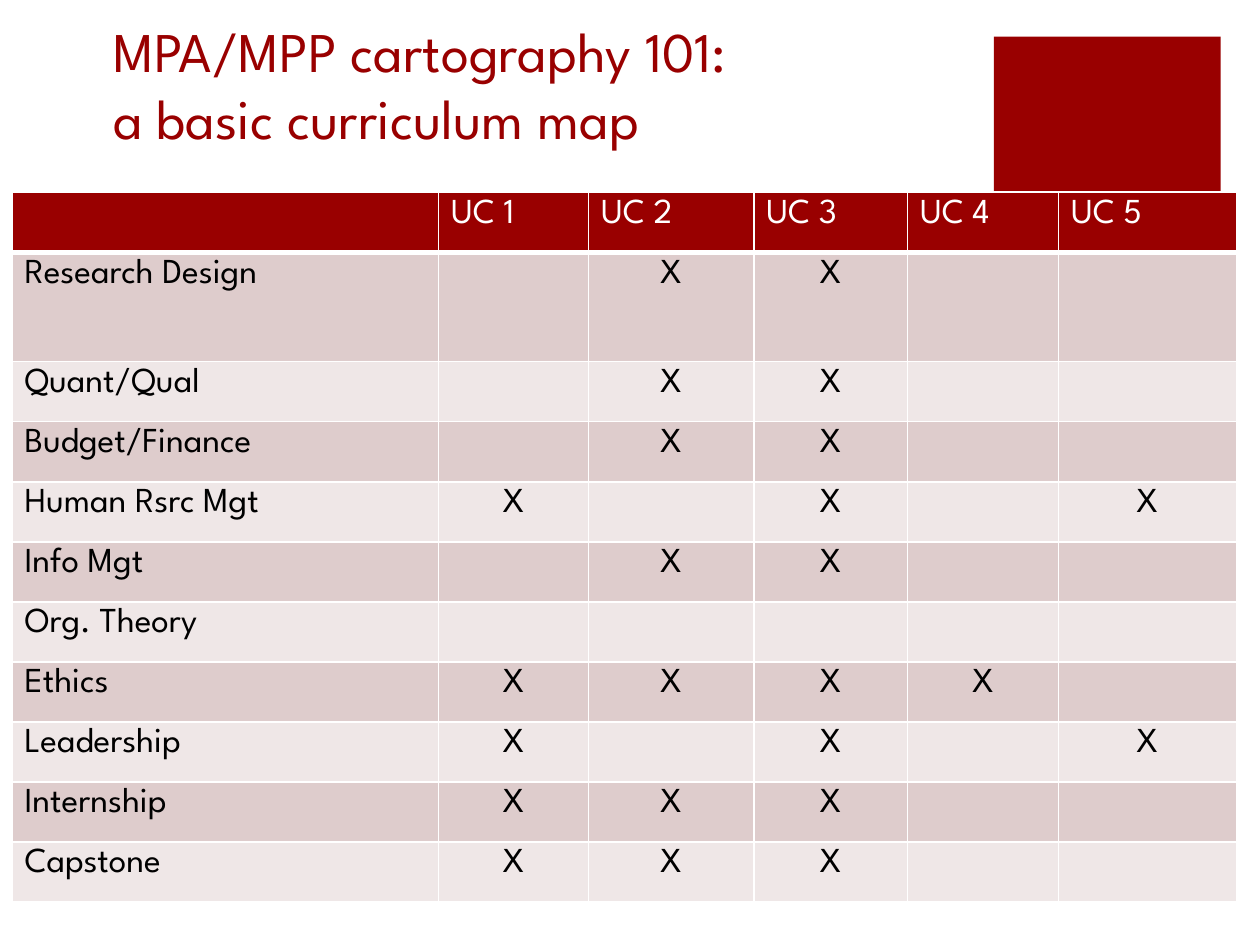
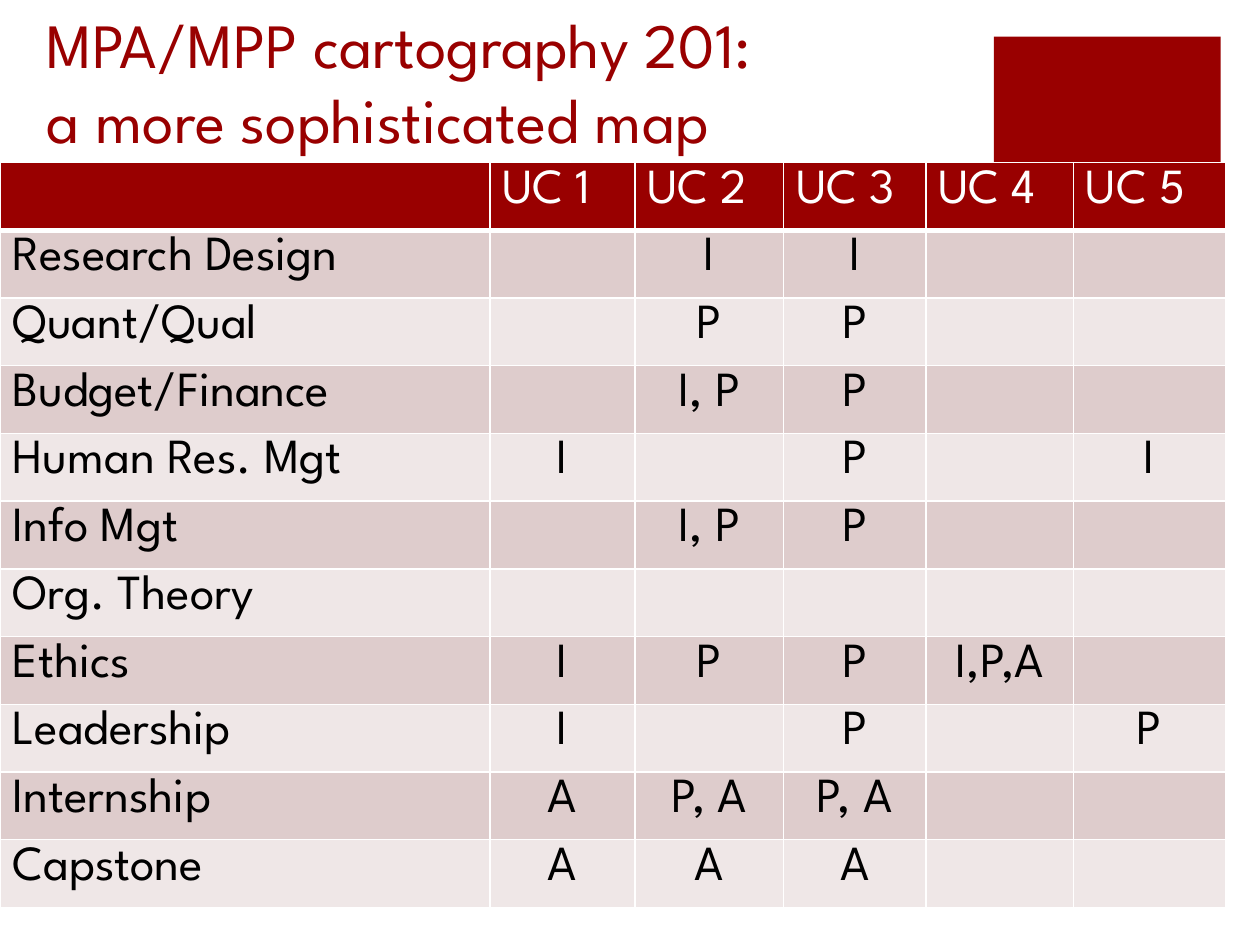
import pptx
import pptx.dml.color
import pptx.enum.shapes
import pptx.enum.text
import pptx.oxml.ns
import pptx.util
from lxml import etree

Pt = pptx.util.Pt
RGBColor = pptx.dml.color.RGBColor
PP_ALIGN = pptx.enum.text.PP_ALIGN

CRIMSON = RGBColor(0x99, 0x00, 0x00)
WHITE = RGBColor(0xFF, 0xFF, 0xFF)
BLACK = RGBColor(0x00, 0x00, 0x00)
ROW_FILLS = (RGBColor(0xDE, 0xCC, 0xCC), RGBColor(0xEF, 0xE7, 0xE7))
FONT = "League Spartan"
TITLE_LINE_SPACING = 1.2
TITLE_ONLY_LAYOUT = 5

HEADINGS = ("", "UC 1", "UC 2", "UC 3", "UC 4", "UC 5")
BASIC_MAP = (
    ("Research Design", "", "X", "X", "", ""),
    ("Quant/Qual", "", "X", "X", "", ""),
    ("Budget/Finance", "", "X", "X", "", ""),
    ("Human Rsrc Mgt", "X", "", "X", "", "X"),
    ("Info Mgt", "", "X", "X", "", ""),
    ("Org. Theory", "", "", "", "", ""),
    ("Ethics", "X", "X", "X", "X", ""),
    ("Leadership", "X", "", "X", "", "X"),
    ("Internship", "X", "X", "X", "", ""),
    ("Capstone", "X", "X", "X", "", ""),
)
SOPHISTICATED_MAP = (
    ("Research Design", "", "I", "I", "", ""),
    ("Quant/Qual", "", "P", "P", "", ""),
    ("Budget/Finance", "", "I, P", "P", "", ""),
    ("Human Res. Mgt", "I", "", "P", "", "I"),
    ("Info Mgt", "", "I, P", "P", "", ""),
    ("Org. Theory", "", "", "", "", ""),
    ("Ethics", "I", "P", "P", "I,P,A", ""),
    ("Leadership", "I", "", "P", "", "P"),
    ("Internship", "A", "P, A", "P, A", "", ""),
    ("Capstone", "A", "A", "A", "", ""),
)


def add_run(paragraph, text, size, color):
    run = paragraph.add_run()
    run.text = text
    run.font.name = FONT
    run.font.size = Pt(size)
    run.font.color.rgb = color


def add_corner_square(slide):
    square = slide.shapes.add_shape(
        pptx.enum.shapes.MSO_SHAPE.RECTANGLE, Pt(568), Pt(21), Pt(129.6), Pt(129.6))
    square.shadow.inherit = False
    square.fill.solid()
    square.fill.fore_color.rgb = CRIMSON
    square.line.fill.background()


def set_title(slide, lines, size, left, top, width, height):
    title = slide.shapes.title
    title.left, title.top = Pt(left), Pt(top)
    title.width, title.height = Pt(width), Pt(height)
    frame = title.text_frame
    frame.word_wrap = True
    frame.auto_size = pptx.enum.text.MSO_AUTO_SIZE.NONE
    frame.vertical_anchor = pptx.enum.text.MSO_ANCHOR.BOTTOM
    paragraph = frame.paragraphs[0]
    paragraph.alignment = PP_ALIGN.LEFT
    paragraph.line_spacing = Pt(size * TITLE_LINE_SPACING)
    for index, line in enumerate(lines):
        if index:
            paragraph.add_line_break()
        add_run(paragraph, line, size, CRIMSON)


def set_borders(cell, bottom_width):
    properties = cell._tc.get_or_add_tcPr()
    qualify = pptx.oxml.ns.qn
    for side, width in (("L", 1), ("R", 1), ("T", 1), ("B", bottom_width)):
        line = etree.SubElement(properties, qualify(f"a:ln{side}"), w=str(Pt(width)))
        fill = etree.SubElement(line, qualify("a:solidFill"))
        etree.SubElement(fill, qualify("a:srgbClr"), val=str(WHITE))


def fill_cell(cell, text, size, row, column):
    is_header = row == 0
    set_borders(cell, 3 if is_header else 1)
    cell.fill.solid()
    cell.fill.fore_color.rgb = CRIMSON if is_header else ROW_FILLS[(row - 1) % 2]
    if text:
        paragraph = cell.text_frame.paragraphs[0]
        centred = column > 0 and not is_header
        paragraph.alignment = PP_ALIGN.CENTER if centred else PP_ALIGN.LEFT
        add_run(paragraph, text, size, WHITE if is_header else BLACK)


def add_curriculum_table(slide, courses, size, left, top, column_widths, row_heights):
    rows = (HEADINGS,) + courses
    table = slide.shapes.add_table(
        len(rows), len(HEADINGS), Pt(left), Pt(top),
        Pt(sum(column_widths)), Pt(sum(row_heights))).table
    for column, width in zip(table.columns, column_widths):
        column.width = Pt(width)
    for row, height in zip(table.rows, row_heights):
        row.height = Pt(height)
    for row_index, texts in enumerate(rows):
        for column_index, text in enumerate(texts):
            fill_cell(table.cell(row_index, column_index), text, size,
                      row_index, column_index)


def add_map_slide(presentation):
    slide = presentation.slides.add_slide(presentation.slide_layouts[TITLE_ONLY_LAYOUT])
    add_corner_square(slide)
    return slide


def main():
    presentation = pptx.Presentation()
    presentation.slide_width, presentation.slide_height = Pt(720), Pt(540)

    slide = add_map_slide(presentation)
    set_title(slide, ("MPA/MPP cartography 101:", "a basic curriculum map"),
              32, 57.6, 0, 608.4, 90)
    add_curriculum_table(slide, BASIC_MAP, 20, 6.8, 109.8,
                         (243.8, 85.7, 94.5, 87.8, 86.3, 101.7),
                         [34.3, 62.6] + [34.3] * 9)

    slide = add_map_slide(presentation)
    set_title(slide, ("MPA/MPP cartography 201:", "a more sophisticated map"),
              36, 19.4, 21.6, 624.2, 71.3)
    add_curriculum_table(slide, SOPHISTICATED_MAP, 28, 0, 92.9,
                         (280, 82.8, 85, 81.4, 84.2, 87),
                         [38.7] * 11)

    presentation.save("out.pptx")


if __name__ == "__main__":
    main()
